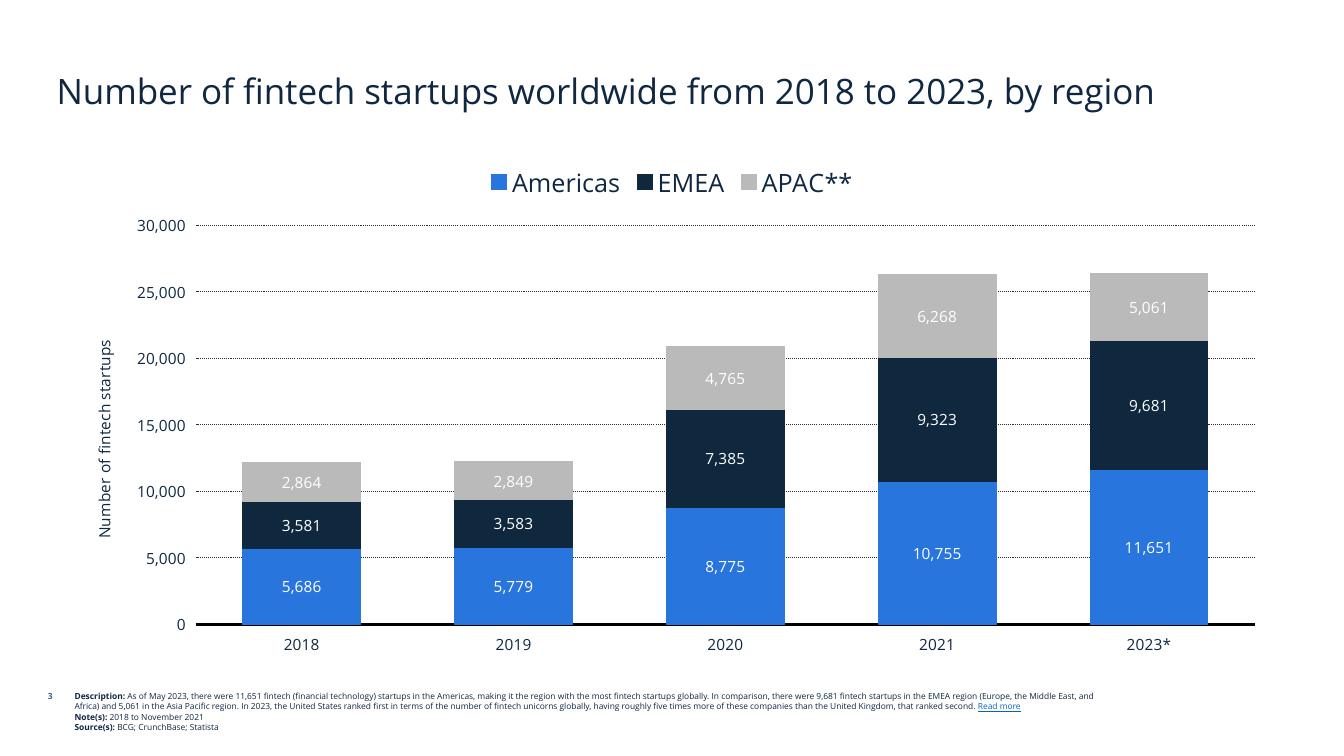
from lxml import etree
from pptx import Presentation
from pptx.chart.data import CategoryChartData
from pptx.dml.color import RGBColor
from pptx.enum.chart import XL_CHART_TYPE as ChartType
from pptx.enum.chart import XL_LABEL_POSITION as LabelPos
from pptx.enum.chart import XL_LEGEND_POSITION as LegendPos
from pptx.enum.chart import XL_TICK_LABEL_POSITION as TickLabelPos
from pptx.enum.chart import XL_TICK_MARK as TickMark
from pptx.enum.dml import MSO_LINE as LineDash
from pptx.enum.text import MSO_ANCHOR as Anchor
from pptx.enum.text import MSO_AUTO_SIZE as AutoSize
from pptx.enum.text import PP_ALIGN as Align
from pptx.oxml.ns import qn
from pptx.util import Cm, Pt

FONT = "Open Sans"
NAVY = "0F2741"
THOUSANDS = "#,##0"

YEARS = ["2018", "2019", "2020", "2021", "2023*"]
REGIONS = [
    ("Americas", "2875DD", [5686, 5779, 8775, 10755, 11651]),
    ("EMEA", "0F283E", [3581, 3583, 7385, 9323, 9681]),
    ("APAC**", "BABABA", [2864, 2849, 4765, 6268, 5061]),
]
DESCRIPTION = (
    "As of May 2023, there were 11,651 fintech (financial technology) startups in the "
    "Americas, making it the region with the most fintech startups globally. In comparison, "
    "there were 9,681 fintech startups in the EMEA region (Europe, the Middle East, and "
    "Africa) and 5,061 in the Asia Pacific region. In 2023, the United States ranked first "
    "in terms of the number of fintech unicorns globally, having roughly five times more of "
    "these companies than the United Kingdom, that ranked second. "
)
# Each footnote line is a list of (text, colour, bold, underlined)
FOOTNOTES = [
    [("Description: ", NAVY, True, False), (DESCRIPTION, NAVY, False, False),
     ("Read more", "0563C1", False, True)],
    [("Note(s): ", NAVY, True, False), ("2018 to November 2021", NAVY, False, False)],
    [("Source(s): ", NAVY, True, False), ("BCG; CrunchBase; Statista", NAVY, False, False)],
]


def rgb(hex_colour):
    return RGBColor.from_string(hex_colour)


def style_font(font, size, colour, bold=False):
    font.name = FONT
    font.size = Pt(size)
    font.bold = bold
    font.color.rgb = rgb(colour)


def set_layout(parent, index, **fractions):
    """Pin a chart part at fractions of the chart area."""
    for old in parent.findall(qn("c:layout")):
        parent.remove(old)
    layout = etree.Element(qn("c:layout"))
    manual = etree.SubElement(layout, qn("c:manualLayout"))
    if "w" in fractions:
        etree.SubElement(manual, qn("c:layoutTarget")).set("val", "inner")
    for mode in ("xMode", "yMode"):
        etree.SubElement(manual, qn(f"c:{mode}")).set("val", "edge")
    for side, share in fractions.items():
        etree.SubElement(manual, qn(f"c:{side}")).set("val", str(share))
    parent.insert(index, layout)


def add_title(slide, left, top, width, height):
    title = slide.shapes.title
    title.left, title.top, title.width, title.height = left, top, width, height
    frame = title.text_frame
    frame.text = "Number of fintech startups worldwide from 2018 to 2023, by region"
    frame.auto_size = AutoSize.NONE
    frame.vertical_anchor = Anchor.BOTTOM
    heading = frame.paragraphs[0]
    heading.alignment = Align.LEFT
    style_font(heading.runs[0].font, 25, NAVY)


def format_axes(chart):
    years, startups = chart.category_axis, chart.value_axis
    for axis in (years, startups):
        axis.major_tick_mark = axis.minor_tick_mark = TickMark.NONE
        axis.tick_label_position = TickLabelPos.LOW
        style_font(axis.tick_labels.font, 11, NAVY)
    years.format.line.color.rgb = rgb("000000")
    years.format.line.width = Pt(2)

    startups.minimum_scale = 0
    startups.maximum_scale = 30000
    startups.major_unit = 5000
    startups.tick_labels.number_format = THOUSANDS
    startups.tick_labels.number_format_is_linked = False
    startups.format.line.fill.background()
    grid = startups.major_gridlines.format.line
    grid.color.rgb = rgb("2F2F2F")
    grid.width = Pt(0.75)
    grid.dash_style = LineDash.ROUND_DOT

    axis_title = startups.axis_title
    axis_title.text_frame.text = "Number of fintech startups"
    style_font(axis_title.text_frame.paragraphs[0].runs[0].font, 11, NAVY)
    set_layout(axis_title._element, 1, x=0.02, y=0.36)


def add_region_chart(slide, left, top, width, height):
    chart_data = CategoryChartData(number_format=THOUSANDS)
    chart_data.categories = YEARS
    for region, _, counts in REGIONS:
        chart_data.add_series(region, counts)
    chart = slide.shapes.add_chart(
        ChartType.COLUMN_STACKED, left, top, width, height, chart_data).chart
    chart.has_title = False
    style_font(chart.font, 18, NAVY)

    # Legend above the columns
    chart.has_legend = True
    chart.legend.position = LegendPos.TOP
    chart.legend.include_in_layout = False
    style_font(chart.legend.font, 18, NAVY)

    # Stacked columns with white values
    plot = chart.plots[0]
    plot.gap_width = 80
    plot.overlap = 100
    plot.vary_by_categories = False
    for series, (_, colour, _) in zip(plot.series, REGIONS):
        series.format.fill.solid()
        series.format.fill.fore_color.rgb = rgb(colour)
        series.format.line.color.rgb = rgb(colour)
        series.format.line.width = Pt(0.75)
        labels = series.data_labels
        labels.show_value = True
        labels.number_format = THOUSANDS
        labels.number_format_is_linked = False
        labels.position = LabelPos.CENTER
        style_font(labels.font, 11, "FFFFFF")

    format_axes(chart)
    set_layout(chart._chartSpace.chart.plotArea, 0, x=0.108, y=0.143, w=0.872, h=0.779)


def add_footer(slide, left, top, width, height):
    # Page number in the left margin
    number_box = slide.shapes.add_textbox(0, top, left - Cm(0.05), Cm(0.76))
    number_box.text_frame.text = "3"
    number = number_box.text_frame.paragraphs[0]
    number.alignment = Align.RIGHT
    style_font(number.runs[0].font, 6, "455F7C", bold=True)

    # Description, notes and sources
    notes = slide.shapes.add_textbox(left, top, width, height).text_frame
    notes.word_wrap = True
    notes.text = "\n".join("".join(part[0] for part in line) for line in FOOTNOTES)
    for paragraph, line in zip(notes.paragraphs, FOOTNOTES):
        paragraph.text = ""
        for text, colour, bold, underlined in line:
            run = paragraph.add_run()
            run.text = text
            style_font(run.font, 6, colour, bold)
            run.font.underline = underlined


def main():
    deck = Presentation()
    deck.slide_width, deck.slide_height = Cm(33.87), Cm(19.05)
    slide = deck.slides.add_slide(deck.slide_layouts[5])
    add_title(slide, Cm(1.17), Cm(0.76), Cm(31.09), Cm(2.18))
    add_region_chart(slide, Cm(1.63), Cm(3.84), Cm(30.61), Cm(12.9))
    add_footer(slide, Cm(1.63), Cm(17.3), Cm(26.59), Cm(1.47))
    deck.save("out.pptx")


if __name__ == "__main__":
    main()
